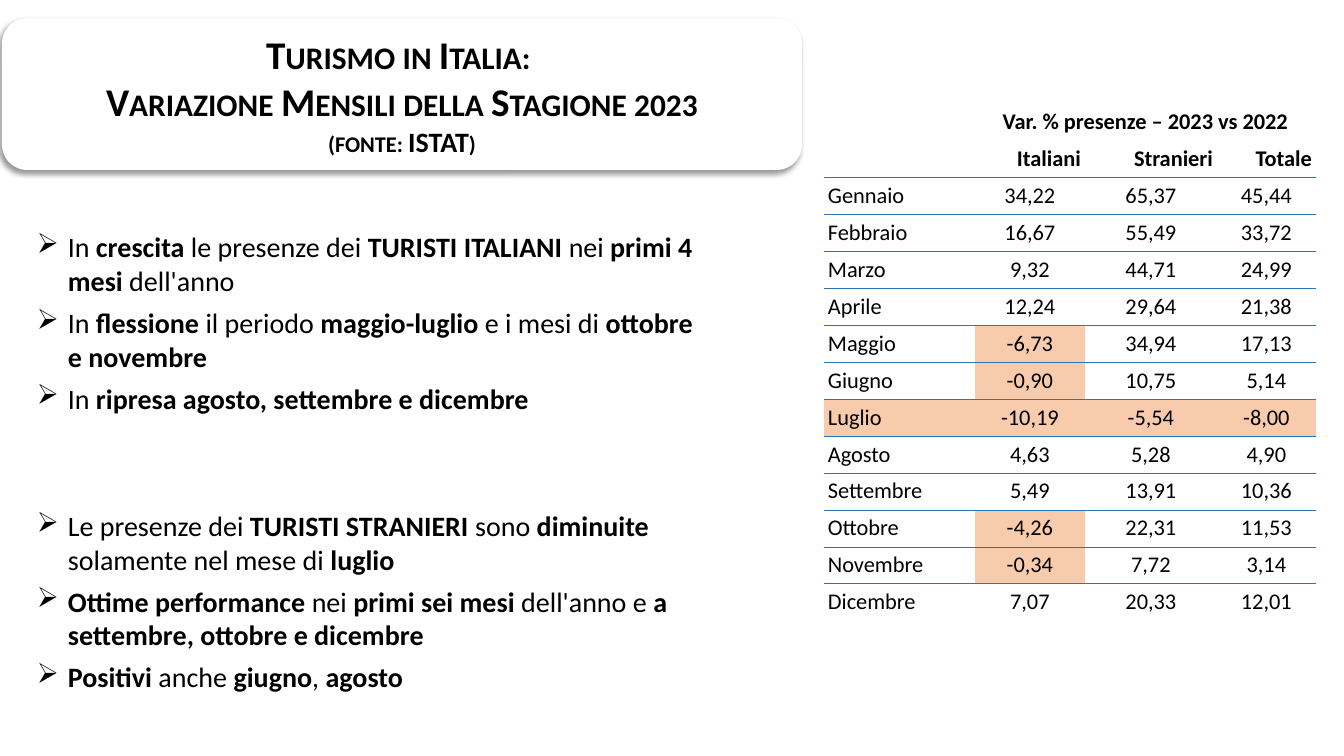
from lxml.etree import SubElement
from pptx import Presentation
from pptx.dml.color import RGBColor
from pptx.enum.shapes import MSO_SHAPE
from pptx.enum.text import MSO_ANCHOR, PP_ALIGN
from pptx.oxml import parse_xml
from pptx.oxml.ns import nsdecls, qn
from pptx.util import Emu, Pt

PX = 12192000 / 1344
FONT = "Calibri"
COLORS = {"text": "000000", "paper": "FFFFFF", "rule": "2E75B6", "decline": "F8CBAD"}

TITLE_LINES = [
    ("Turismo in Italia: ", 28),
    ("Variazione Mensili della Stagione 2023", 28),
    ("(fonte: ISTAT)", 20),
]

ITALIAN_POINTS = [
    "In *crescita* le presenze dei *TURISTI ITALIANI *nei *primi 4 mesi *dell'anno",
    "In *flessione* il periodo *maggio-luglio* e i mesi di *ottobre e novembre*",
    "In *ripresa agosto, settembre e dicembre*",
]
FOREIGN_POINTS = [
    "Le presenze dei *TURISTI STRANIERI *sono *diminuite* solamente nel mese di *luglio*",
    "*Ottime performance* nei *primi sei mesi *dell'anno e *a settembre, ottobre e dicembre*",
    "*Positivi* anche *giugno*, *agosto*",
]

HEADINGS = ["Italiani", "Stranieri", "Totale"]
MONTHS = [
    ("Gennaio", "34,22", "65,37", "45,44"),
    ("Febbraio", "16,67", "55,49", "33,72"),
    ("Marzo", "9,32", "44,71", "24,99"),
    ("Aprile", "12,24", "29,64", "21,38"),
    ("Maggio", "-6,73", "34,94", "17,13"),
    ("Giugno", "-0,90", "10,75", "5,14"),
    ("Luglio", "-10,19", "-5,54", "-8,00"),
    ("Agosto", "4,63", "5,28", "4,90"),
    ("Settembre", "5,49", "13,91", "10,36"),
    ("Ottobre", "-4,26", "22,31", "11,53"),
    ("Novembre", "-0,34", "7,72", "3,14"),
    ("Dicembre", "7,07", "20,33", "12,01"),
]
COLUMN_WIDTHS = [151, 110, 132, 99]
ROW_HEIGHT = 37


def px(length):
    return Emu(round(length * PX))


def box(*lengths):
    return [px(length) for length in lengths]


def color(name):
    return RGBColor.from_string(COLORS[name])


def add_run(paragraph, text, size, bold=False):
    run = paragraph.add_run()
    run.text = text
    run.font.name = FONT
    run.font.size = Pt(size)
    run.font.bold = bold
    run.font.color.rgb = color("text")
    return run


def next_paragraph(frame, index):
    return frame.add_paragraph() if index else frame.paragraphs[0]


def add_shadow(shape):
    shape.shadow.inherit = False
    effects = shape._element.spPr.find(qn("a:effectLst"))
    effects.append(parse_xml(
        f'<a:outerShdw {nsdecls("a")} blurRad="50800" dist="38100" dir="8100000" '
        f'algn="tr" rotWithShape="0"><a:srgbClr val="{COLORS["text"]}">'
        '<a:alpha val="40000"/></a:srgbClr></a:outerShdw>'))


def add_title(slide):
    banner = slide.shapes.add_shape(MSO_SHAPE.ROUNDED_RECTANGLE, *box(2, 18, 800, 152))
    banner.fill.solid()
    banner.fill.fore_color.rgb = color("paper")
    banner.line.fill.background()
    add_shadow(banner)
    frame = banner.text_frame
    frame.word_wrap = True
    frame.vertical_anchor = MSO_ANCHOR.MIDDLE
    for index, (text, size) in enumerate(TITLE_LINES):
        paragraph = next_paragraph(frame, index)
        paragraph.alignment = PP_ALIGN.CENTER
        run = add_run(paragraph, text, size, True)
        run.font._element.set("cap", "small")


def add_bullet(paragraph):
    properties = paragraph._p.get_or_add_pPr()
    properties.set("marL", str(px(31)))
    properties.set("indent", str(px(-31)))
    bullet_color = SubElement(properties, qn("a:buClr"))
    SubElement(bullet_color, qn("a:srgbClr"), val=COLORS["text"])
    SubElement(properties, qn("a:buChar"), char="➢")


def add_comments(slide):
    frame = slide.shapes.add_textbox(*box(27, 225, 679, 472)).text_frame
    frame.word_wrap = True
    for index, point in enumerate(ITALIAN_POINTS + FOREIGN_POINTS):
        paragraph = next_paragraph(frame, index)
        paragraph.space_before = Pt(67 if index == len(ITALIAN_POINTS) else 6)
        add_bullet(paragraph)
        for position, text in enumerate(point.split("*")):
            if text:
                add_run(paragraph, text, 20, position % 2 == 1)


def underline(cell):
    cell._tc.get_or_add_tcPr().insert(0, parse_xml(
        f'<a:lnB {nsdecls("a")} w="6350"><a:solidFill>'
        f'<a:srgbClr val="{COLORS["rule"]}"/></a:solidFill></a:lnB>'))


def fill_cell(cell, text, alignment, bold=False, declining=False):
    paragraph = cell.text_frame.paragraphs[0]
    paragraph.alignment = alignment
    add_run(paragraph, text, 16, bold)
    if declining:
        cell.fill.solid()
        cell.fill.fore_color.rgb = color("decline")


def add_variations(slide):
    row_count = len(MONTHS) + 2
    table = slide.shapes.add_table(
        row_count, len(COLUMN_WIDTHS),
        *box(824, 103, sum(COLUMN_WIDTHS), row_count * ROW_HEIGHT)).table
    table.first_row = table.horz_banding = False
    table._tbl.tblPr.find(qn("a:tableStyleId")).text = "{2D5ABB26-0587-4C30-8999-92F81FD0307C}"
    for column, width in zip(table.columns, COLUMN_WIDTHS):
        column.width = px(width)
    for row in table.rows:
        row.height = px(ROW_HEIGHT)
    for cell in table.iter_cells():
        cell.fill.background()
        cell.vertical_anchor = MSO_ANCHOR.MIDDLE
        cell.margin_left = cell.margin_right = px(4)
        cell.margin_top = cell.margin_bottom = px(3)

    table.cell(0, 1).merge(table.cell(0, 3))
    fill_cell(table.cell(0, 1), "Var. % presenze – 2023 vs 2022", PP_ALIGN.CENTER, True)
    for column, heading in enumerate(HEADINGS, 1):
        fill_cell(table.cell(1, column), heading, PP_ALIGN.RIGHT, True)
    for row, (month, *values) in enumerate(MONTHS, 2):
        declines = [value.startswith("-") for value in values]
        fill_cell(table.cell(row, 0), month, PP_ALIGN.LEFT, declining=all(declines))
        for column, (value, declining) in enumerate(zip(values, declines), 1):
            fill_cell(table.cell(row, column), value, PP_ALIGN.CENTER, declining=declining)
    for row in range(1, row_count - 1):
        for column in range(len(COLUMN_WIDTHS)):
            underline(table.cell(row, column))


def main():
    presentation = Presentation()
    presentation.slide_width, presentation.slide_height = box(1344, 756)
    slide = presentation.slides.add_slide(presentation.slide_layouts[6])
    add_title(slide)
    add_variations(slide)
    add_comments(slide)
    presentation.save("out.pptx")


if __name__ == "__main__":
    main()
